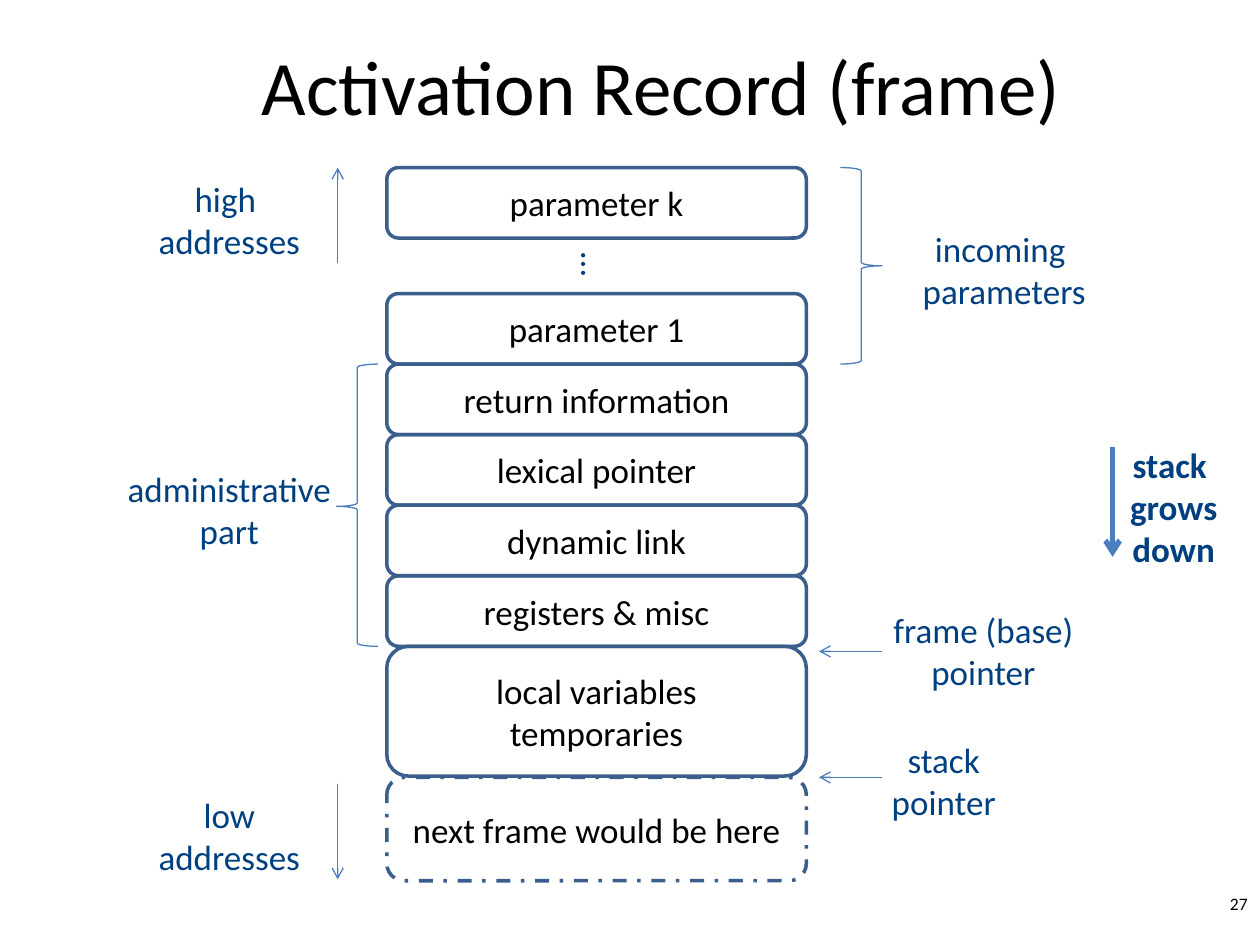
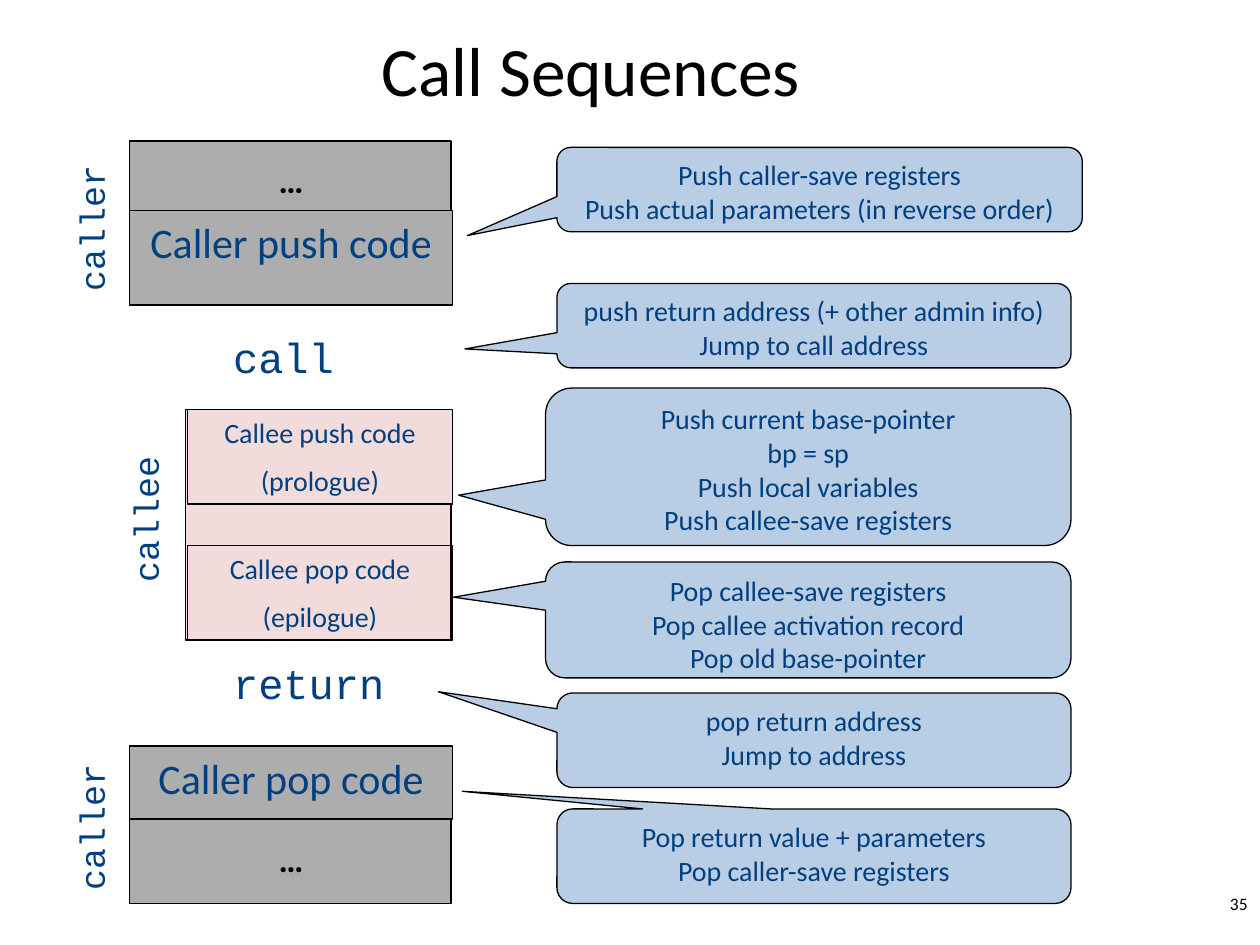
from lxml import etree
from pptx import Presentation
from pptx.dml.color import RGBColor
from pptx.enum.dml import MSO_LINE
from pptx.enum.shapes import MSO_CONNECTOR, MSO_SHAPE
from pptx.enum.text import MSO_ANCHOR, MSO_AUTO_SIZE, PP_ALIGN
from pptx.oxml.ns import qn
from pptx.util import Inches, Pt

COLUMNS, ROWS = 10, 7.5
COLOURS = {
    "black": "000000",
    "navy": "004080",
    "outline": "3A5F8C",
    "arrow": "4B7EBC",
    "caller": "ACACAC",
    "caller code": "ADADAD",
    "callee": "F2DCDB",
    "callout": "B9CDE5",
}
SANS, MONO = "Calibri", "Courier New"
RECTANGLE = MSO_SHAPE.RECTANGLE
ROUNDED = MSO_SHAPE.ROUNDED_RECTANGLE
CALLOUT = MSO_SHAPE.ROUNDED_RECTANGULAR_CALLOUT
LEFT_BRACE, RIGHT_BRACE = MSO_SHAPE.LEFT_BRACE, MSO_SHAPE.RIGHT_BRACE
STRAIGHT = MSO_CONNECTOR.STRAIGHT
DASH_DOT = MSO_LINE.DASH_DOT
TOP, MIDDLE = MSO_ANCHOR.TOP, MSO_ANCHOR.MIDDLE
CENTER, RIGHT = PP_ALIGN.CENTER, PP_ALIGN.RIGHT
FIT_SHAPE = MSO_AUTO_SIZE.SHAPE_TO_FIT_TEXT


def colour(name):
    return RGBColor.from_string(COLOURS[name])


class Page:
    """One slide with its house style; places are in grid columns and rows."""

    def __init__(self, deck, title, title_place, title_size, number):
        self.column = deck.slide_width / COLUMNS
        self.row = deck.slide_height / ROWS
        self.shapes = deck.slides.add_slide(deck.slide_layouts[6]).shapes
        self.text(title, title_place, title_size, "black", anchor=MIDDLE)
        self.text(number, (7.92, 7.04, 2.08, 0.3), 10, "black", align=RIGHT)

    def scale(self, place):
        """Turn alternating columns and rows into slide lengths."""
        units = (self.column, self.row) * 2
        return [round(value * unit) for value, unit in zip(place, units)]

    def fill_text(self, box, text, size, ink, font=SANS, bold=False,
                  align=CENTER, anchor=TOP, space_before=0):
        frame = box.text_frame
        frame.text = text
        frame.vertical_anchor = anchor
        for para in frame.paragraphs:
            para.alignment = align
            para.space_before = Pt(space_before)
            for span in para.runs:
                span.font.size = Pt(size)
                span.font.name = font
                span.font.bold = bold
                span.font.color.rgb = colour(ink)

    def text(self, text, place, size, ink, **style):
        box = self.shapes.add_textbox(*self.scale(place))
        box.text_frame.word_wrap = True
        self.fill_text(box, text, size, ink, **style)
        return box

    def label(self, text, place, size=20, ink="navy", turn=0, **style):
        """Unwrapped text that sizes its own box."""
        box = self.text(text, place, size, ink, **style)
        box.text_frame.word_wrap = False
        box.text_frame.auto_size = FIT_SHAPE
        box.rotation = turn

    def shape(self, kind, place, fill=None, line="black", width=0.75):
        shape = self.shapes.add_shape(kind, *self.scale(place))
        shape.shadow.inherit = False
        if fill:
            shape.fill.solid()
            shape.fill.fore_color.rgb = colour(fill)
        else:
            shape.fill.background()
        shape.line.color.rgb = colour(line)
        shape.line.width = Pt(width)
        return shape

    def slot(self, text, top, height, dash=None):
        """One part of the activation record."""
        box = self.shape(ROUNDED, (3.07, top, 3.33, height),
                         line="outline", width=2)
        if dash:
            box.line.dash_style = dash
        self.fill_text(box, text, 20, "black", anchor=MIDDLE)

    def brace(self, kind, place, curve=0.083, point=0.5):
        brace = self.shape(kind, place, line="arrow")
        brace.adjustments[0] = curve
        brace.adjustments[1] = point

    def arrow(self, start, end, width=0.75):
        arrow = self.shapes.add_connector(STRAIGHT, *self.scale(start + end))
        arrow.line.color.rgb = colour("arrow")
        arrow.line.width = Pt(width)
        properties = arrow.element.spPr
        etree.SubElement(properties.find(qn("a:ln")), qn("a:tailEnd"),
                         type="arrow")
        etree.SubElement(properties, qn("a:effectLst"))

    def code(self, text, place, fill, size):
        box = self.shape(RECTANGLE, place, fill)
        self.fill_text(box, text, size, "navy", space_before=size / 2)

    def callout(self, text, place, tip):
        left, top, width, height = place
        bubble = self.shape(CALLOUT, place, "callout")
        bubble.adjustments[0] = (tip[0] - left) / width - 0.5
        bubble.adjustments[1] = (tip[1] - top) / height - 0.5
        self.fill_text(bubble, text, 16, "navy")


def activation_record(deck):
    page = Page(deck, "Activation Record (frame)", (1, 0.17, 8.5, 1), 44, "27")

    slot_height, first_top = 0.56, 2.33
    page.slot("parameter k", 1.33, slot_height)
    slots = ("parameter 1", "return information", "lexical pointer",
             "dynamic link", "registers & misc")
    for index, name in enumerate(slots):
        page.slot(name, first_top + index * slot_height, slot_height)
    page.slot("local variables\ntemporaries", 5.13, 1.03)
    page.slot("next frame would be here", 6.17, 0.82, DASH_DOT)
    page.label("…", (4.52, 1.88, 0.4, 0.44), turn=90)

    page.brace(LEFT_BRACE, (2.67, 2.89, 0.33, 2.24), point=0.504)
    page.brace(RIGHT_BRACE, (6.67, 1.33, 0.33, 1.56))

    page.arrow((2.68, 2.09), (2.68, 1.33))
    page.arrow((2.68, 6.22), (2.68, 6.98))
    for level in (6.17, 5.17):
        page.arrow((7, level), (6.5, level))
    page.arrow((8.83, 3.55), (8.83, 4.42), width=3)

    labels = (
        ("administrative\npart", 0.9, 3.66, 1.84),
        ("high \vaddresses", 1.15, 1.36, 1.34),
        ("low\vaddresses", 1.15, 6.25, 1.34),
        ("frame (base)\vpointer", 6.98, 4.78, 1.65),
        ("stack\vpointer", 6.97, 5.81, 1.04),
        ("incoming \vparameters", 7.21, 1.76, 1.52),
    )
    for text, left, top, width in labels:
        page.label(text, (left, top, width, 0.77))
    page.label("stack \ngrows \ndown", (8.86, 3.47, 0.91, 1.11), bold=True)


def call_sequences(deck):
    page = Page(deck, "Call Sequences", (0.44, 0.17, 8.5, 0.75), 39.6, "35")

    blocks = (
        ("caller", (1.03, 1.12, 2.55, 1.3), (0.12, 1.6)),
        ("callee", (1.47, 3.25, 2.11, 1.83), (0.55, 3.91)),
        ("caller", (1.03, 5.92, 2.55, 1.25), (0.12, 6.35)),
    )
    for role, place, corner in blocks:
        page.shape(RECTANGLE, place, role)
        page.label(role, corner + (1.2, 0.43), turn=270, font=MONO)
    for word, top, width in (("call", 2.58, 1), ("return", 5.17, 1.4)):
        page.label(word, (1.75, top, width, 0.5), 24, font=MONO)

    page.code("Caller push code", (1.03, 1.67, 2.56, 0.75), "caller code", 24)
    page.code("Callee push code\n(prologue)", (1.49, 3.25, 2.1, 0.75),
              "callee", 16)
    page.code("Callee pop code\n(epilogue)", (1.49, 4.33, 2.1, 0.75), None, 16)
    page.code("Caller pop code", (1.03, 5.92, 2.56, 0.58), "caller code", 24)

    callouts = (
        ("Push caller-save registers\n"
         "Push actual parameters (in reverse order)",
         (4.42, 1.17, 4.17, 0.67), (3.71, 1.87)),
        ("push return address (+ other admin info)\nJump to call address",
         (4.42, 2.25, 4.08, 0.67), (3.69, 2.77)),
        ("Push current base-pointer\nbp = sp\n"
         "Push local variables\nPush callee-save registers",
         (4.33, 3.08, 4.17, 1.25), (3.64, 3.93)),
        ("Pop callee-save registers\nPop callee activation record\n"
         "Pop old base-pointer",
         (4.33, 4.46, 4.17, 0.92), (3.6, 4.74)),
        ("pop return address\nJump to address",
         (4.42, 5.5, 4.08, 0.75), (3.48, 5.49)),
        ("Pop return value + parameters\nPop caller-save registers",
         (4.42, 6.42, 4.08, 0.75), (3.67, 6.28)),
    )
    for text, place, tip in callouts:
        page.callout(text, place, tip)

    for top in (1.21, 6.6):
        page.text("…", (2, top, 0.62, 0.44), 20, "black", bold=True)


def main():
    deck = Presentation()
    deck.slide_width, deck.slide_height = Inches(10), Inches(7.5)
    activation_record(deck)
    call_sequences(deck)
    deck.save("out.pptx")


if __name__ == "__main__":
    main()
